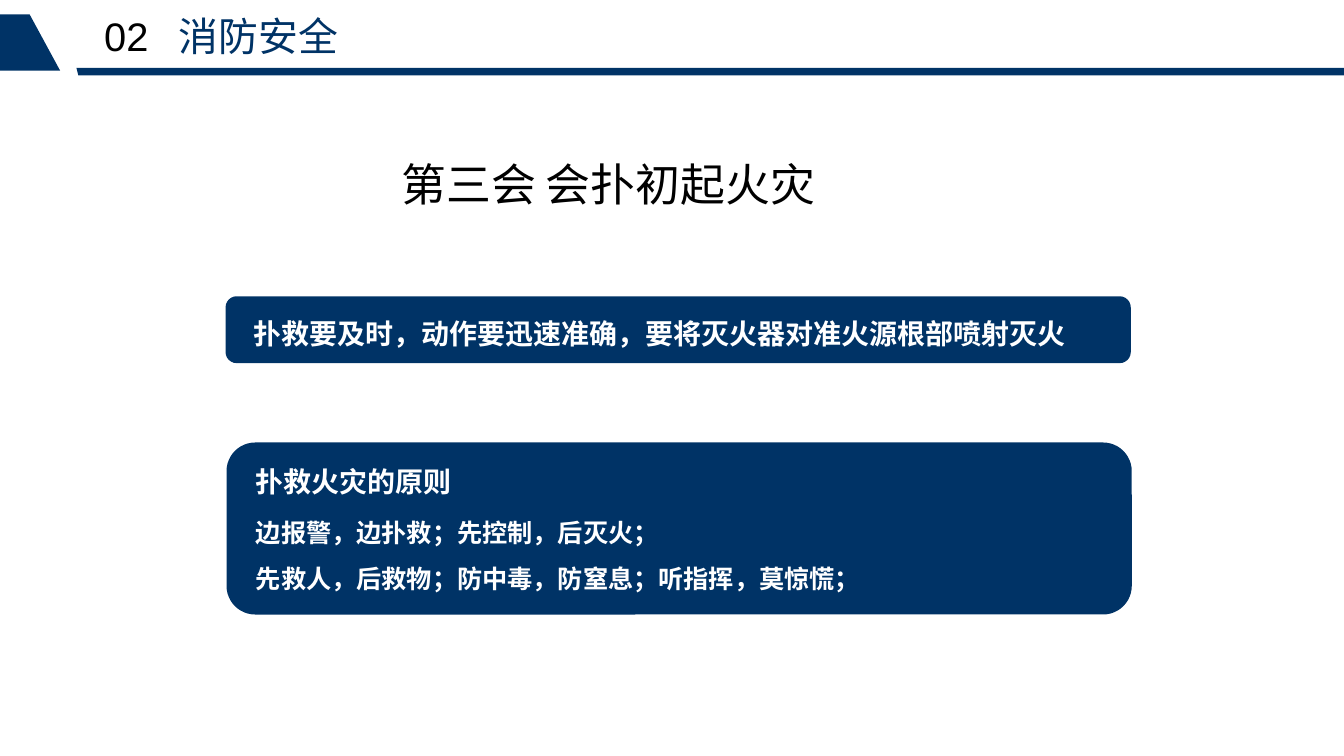
import pptx
import pptx.util
import pptx.dml.color
import pptx.enum.shapes
import pptx.enum.text
import pptx.oxml.ns
import lxml.etree

Inches = pptx.util.Inches
NAVY, WHITE, BLACK = "003366", "FFFFFF", "000000"
CHINESE = "Noto Sans CJK SC"


def paint(color_format, value):
    color_format.rgb = pptx.dml.color.RGBColor.from_string(value)


def add_run(paragraph, text, color, format_values):
    run = paragraph.add_run()
    run.text = text
    for name, value in format_values.items():
        setattr(run.font, name, value)
    paint(run.font.color, color)
    east_asian = lxml.etree.SubElement(run.font._element, pptx.oxml.ns.qn("a:ea"))
    east_asian.set("typeface", CHINESE)


presentation = pptx.Presentation()
presentation.slide_width = Inches(14.06)
presentation.slide_height = Inches(7.91)
slide = presentation.slides.add_slide(presentation.slide_layouts[5])

panels = []
for left, top, height in [(2.36, 3.1, 0.7), (2.37, 4.63, 1.8)]:
    panel = slide.shapes.add_shape(
        pptx.enum.shapes.MSO_SHAPE.ROUNDED_RECTANGLE,
        Inches(left), Inches(top), Inches(9.47), Inches(height))
    panels.append(panel)

header_outlines = [
    [(0, 0.15), (0.31, 0.15), (0.63, 0.74), (0, 0.74)],
    [(0.8, 0.71), (14.06, 0.71), (14.06, 0.79), (0.82, 0.79)],
]
header_bars = []
for outline in header_outlines:
    points = [(Inches(x), Inches(y)) for x, y in outline]
    builder = slide.shapes.build_freeform(*points[0])
    builder.add_line_segments(points[1:], close=True)
    header_bars.append(builder.convert_to_shape())

for shape in panels + header_bars:
    shape.shadow.inherit = False
    shape.fill.solid()
    paint(shape.fill.fore_color, NAVY)
    shape.line.fill.background()

title = slide.shapes.title
title_place = {"left": 1.09, "top": 0.12, "width": 8.57, "height": 0.5}
for name, value in title_place.items():
    setattr(title, name, Inches(value))
title_format = {
    "margin_left": 0, "margin_top": 0, "margin_right": 0, "margin_bottom": 0,
    "word_wrap": True,
    "auto_size": pptx.enum.text.MSO_AUTO_SIZE.NONE,
    "vertical_anchor": pptx.enum.text.MSO_ANCHOR.TOP,
}
for name, value in title_format.items():
    setattr(title.text_frame, name, value)
paragraph = title.text_frame.paragraphs[0]
paragraph.alignment = pptx.enum.text.PP_ALIGN.LEFT
tab_list = lxml.etree.SubElement(
    paragraph._p.get_or_add_pPr(), pptx.oxml.ns.qn("a:tabLst"))
tab = lxml.etree.SubElement(tab_list, pptx.oxml.ns.qn("a:tab"))
tab.set("pos", str(Inches(0.78)))
tab.set("algn", "l")
for text, color, font_name in [("02\t", BLACK, "Arial"), ("消防安全", NAVY, CHINESE)]:
    add_run(paragraph, text, color, {"name": font_name, "size": pptx.util.Pt(30)})

text_blocks = [
    ((4.1, 1.59, 5.06, 0.67), 33.8, BLACK, False, 1, ["第三会 会扑初起火灾"]),
    ((2.55, 3.09, 9.09, 0.63), 21.1, WHITE, True, 1.5,
     ["扑救要及时，动作要迅速准确，要将灭火器对准火源根部喷射灭火"]),
    ((2.57, 4.64, 2.28, 0.63), 21.1, WHITE, True, 1.5, ["扑救火灾的原则"]),
    ((2.58, 5.21, 7.03, 1.06), 19, WHITE, True, 1.5,
     ["边报警，边扑救；先控制，后灭火；",
      "先救人，后救物；防中毒，防窒息；听指挥，莫惊慌；"]),
]
for place, size, color, bold, line_spacing, lines in text_blocks:
    text_frame = slide.shapes.add_textbox(*map(Inches, place)).text_frame
    text_frame.word_wrap = True
    for index, line in enumerate(lines):
        paragraph = text_frame.add_paragraph() if index else text_frame.paragraphs[0]
        paragraph.line_spacing = line_spacing
        add_run(paragraph, line, color,
                {"name": CHINESE, "size": pptx.util.Pt(size), "bold": bold})

presentation.save("out.pptx")
